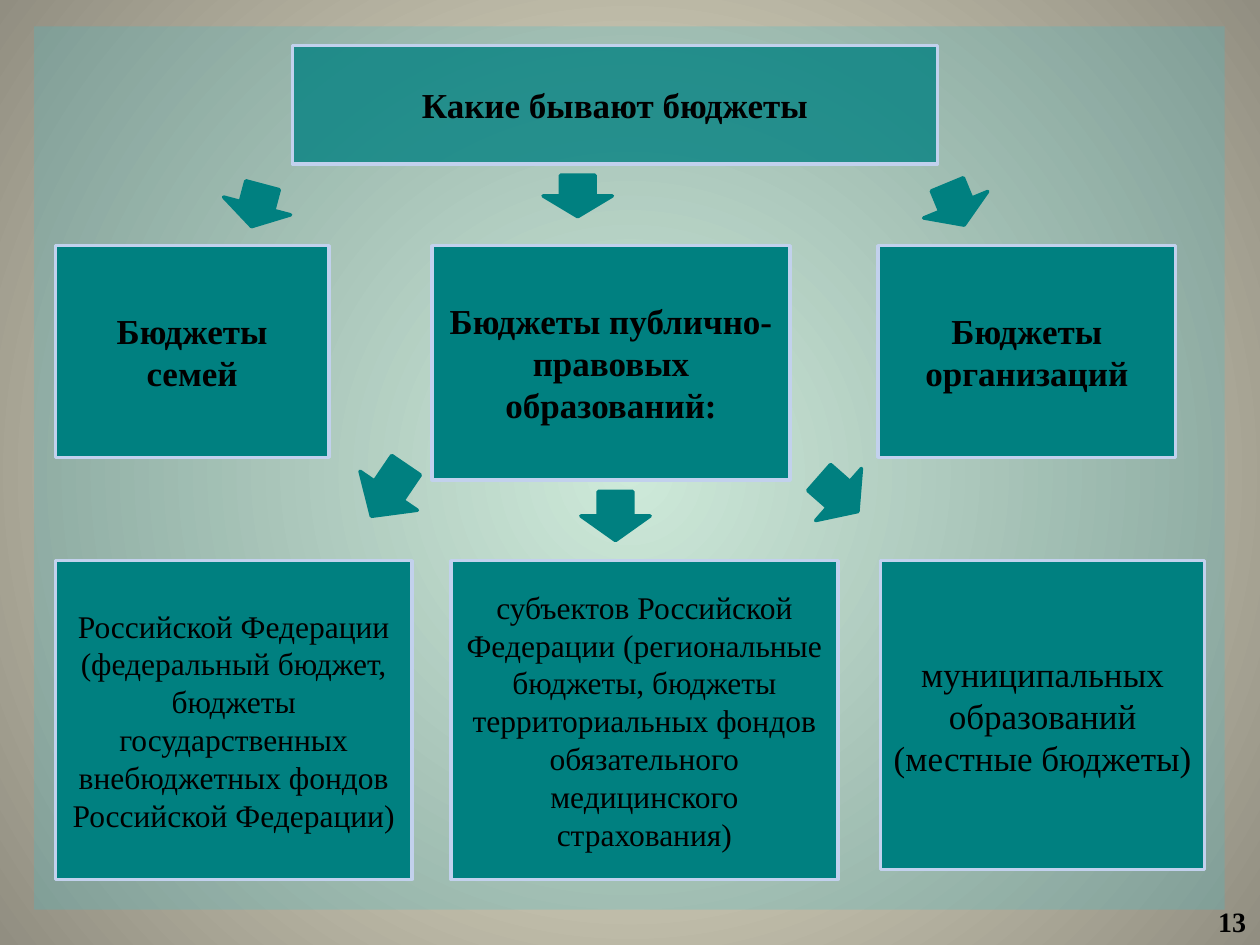
from dataclasses import dataclass

from lxml import etree
from pptx import Presentation, util as u
from pptx.dml.color import RGBColor
from pptx.enum import shapes, text
from pptx.oxml.ns import qn

COLUMNS, ROWS = 100, 75
WIDTH, HEIGHT = u.Inches(10), u.Inches(7.5)


@dataclass(frozen=True)
class Theme:
    font: str = "Times New Roman"
    text: str = "000000"
    box: str = "008080"
    border: str = "C2D1ED"
    panel: str = "3DC1CF"
    background: tuple[str, str] = ("FCF7DD", "918E81")
    large: int = 20
    medium: int = 18
    small: int = 16
    line: int = 2


@dataclass(frozen=True)
class Area:
    """A place on the grid, in columns and rows."""
    column: float
    row: float
    columns: float
    rows: float

    def lengths(self) -> tuple[int, int, int, int]:
        return (int(WIDTH * self.column / COLUMNS), int(HEIGHT * self.row / ROWS),
                int(WIDTH * self.columns / COLUMNS), int(HEIGHT * self.rows / ROWS))


@dataclass(frozen=True)
class Box:
    area: Area
    lines: tuple[str, ...]
    size: int
    bold: bool = False
    kind: shapes.MSO_SHAPE = shapes.MSO_SHAPE.RECTANGLE
    opacity: int = 100


@dataclass(frozen=True)
class Arrow:
    area: Area
    rotation: float


THEME = Theme()
KINDS_ROW, LEVELS_ROW = 19.5, 44.5

BOXES = (
    Box(Area(23.2, 3.6, 51.2, 9.4), ("Какие бывают бюджеты",), THEME.large, True,
        shapes.MSO_SHAPE.FLOWCHART_PROCESS, 78),
    Box(Area(4.4, KINDS_ROW, 21.7, 16.8), ("Бюджеты семей",), THEME.large, True),
    Box(Area(34.3, KINDS_ROW, 28.4, 18.6),
        ("Бюджеты публично-правовых образований:",), THEME.large, True),
    Box(Area(69.7, KINDS_ROW, 23.6, 16.8), ("Бюджеты организаций",), THEME.large, True),
    Box(Area(4.4, LEVELS_ROW, 28.3, 25.3),
        ("Российской Федерации (федеральный бюджет, бюджеты государственных "
         "внебюджетных фондов Российской Федерации)",), THEME.medium),
    Box(Area(35.8, LEVELS_ROW, 30.7, 25.3),
        ("субъектов Российской Федерации (региональные бюджеты, бюджеты "
         "территориальных фондов обязательного медицинского страхования)",), THEME.medium),
    Box(Area(69.9, LEVELS_ROW, 25.7, 24.5),
        ("муниципальных образований", "(местные бюджеты)"), THEME.large),
)

ARROWS = (
    Arrow(Area(18.7, 13.6, 3.4, 5.5), 104.9),
    Arrow(Area(74.1, 13.5, 3.5, 5.5), 67.5),
    Arrow(Area(44.2, 12.8, 3.3, 5.5), 90),
    Arrow(Area(28.4, 36.2, 4.9, 5.5), 124.2),
    Arrow(Area(46.9, 38.2, 3.9, 5.5), 90),
    Arrow(Area(64.5, 36.5, 4.1, 5.5), 41.3),
)


def paint_background(slide) -> None:
    """Fill the slide with a gradient that spreads from its centre."""
    fill = slide.background.fill
    fill.gradient()
    for stop, color in zip(fill.gradient_stops, THEME.background):
        stop.color.rgb = RGBColor.from_string(color)
    gradient = slide.element.find(".//" + qn("a:gradFill"))
    gradient.remove(gradient.find(qn("a:lin")))
    circle = etree.Element(qn("a:path"), {"path": "circle"})
    etree.SubElement(circle, qn("a:fillToRect"), dict.fromkeys("ltrb", "50000"))
    gradient.find(qn("a:gsLst")).addnext(circle)


def add_filled(slide, kind: shapes.MSO_SHAPE, area: Area, color: str,
               border: str | None = None, opacity: int = 100):
    shape = slide.shapes.add_shape(kind, *area.lengths())
    shape.shadow.inherit = False
    shape.fill.solid()
    shape.fill.fore_color.rgb = RGBColor.from_string(color)
    if opacity < 100:
        solid = shape.element.spPr.find(qn("a:solidFill"))
        etree.SubElement(solid[0], qn("a:alpha"), val=str(opacity * 1000))
    if border:
        shape.line.color.rgb = RGBColor.from_string(border)
        shape.line.width = u.Pt(THEME.line)
    else:
        shape.line.fill.background()
    return shape


def write(shape, lines: tuple[str, ...], size: int, bold: bool,
          alignment: text.PP_ALIGN) -> None:
    frame = shape.text_frame
    frame.word_wrap = True
    frame.text = "\n".join(lines)
    font_format = {"name": THEME.font, "size": u.Pt(size), "bold": bold}
    for paragraph in frame.paragraphs:
        paragraph.alignment = alignment
        for run in paragraph.runs:
            for name, value in font_format.items():
                setattr(run.font, name, value)
            run.font.color.rgb = RGBColor.from_string(THEME.text)


def draw_box(slide, box: Box) -> None:
    shape = add_filled(slide, box.kind, box.area, THEME.box, THEME.border, box.opacity)
    write(shape, box.lines, box.size, box.bold, text.PP_ALIGN.CENTER)
    shape.text_frame.vertical_anchor = text.MSO_ANCHOR.MIDDLE


def draw_arrow(slide, arrow: Arrow) -> None:
    shape = add_filled(slide, shapes.MSO_SHAPE.RIGHT_ARROW, arrow.area, THEME.box, THEME.box)
    shape.rotation = arrow.rotation


def main() -> None:
    presentation = Presentation()
    presentation.slide_width, presentation.slide_height = WIDTH, HEIGHT
    slide = presentation.slides.add_slide(presentation.slide_layouts[6])
    paint_background(slide)
    add_filled(slide, shapes.MSO_SHAPE.RECTANGLE, Area(2.7, 2.1, 94.5, 70.1),
               THEME.panel, opacity=24)
    for box in BOXES:
        draw_box(slide, box)
    for arrow in ARROWS:
        draw_arrow(slide, arrow)
    number = slide.shapes.add_textbox(*Area(95.7, 71.3, 4.3, 3.7).lengths())
    write(number, ("13",), THEME.small, True, text.PP_ALIGN.LEFT)
    presentation.save("out.pptx")


if __name__ == "__main__":
    main()
